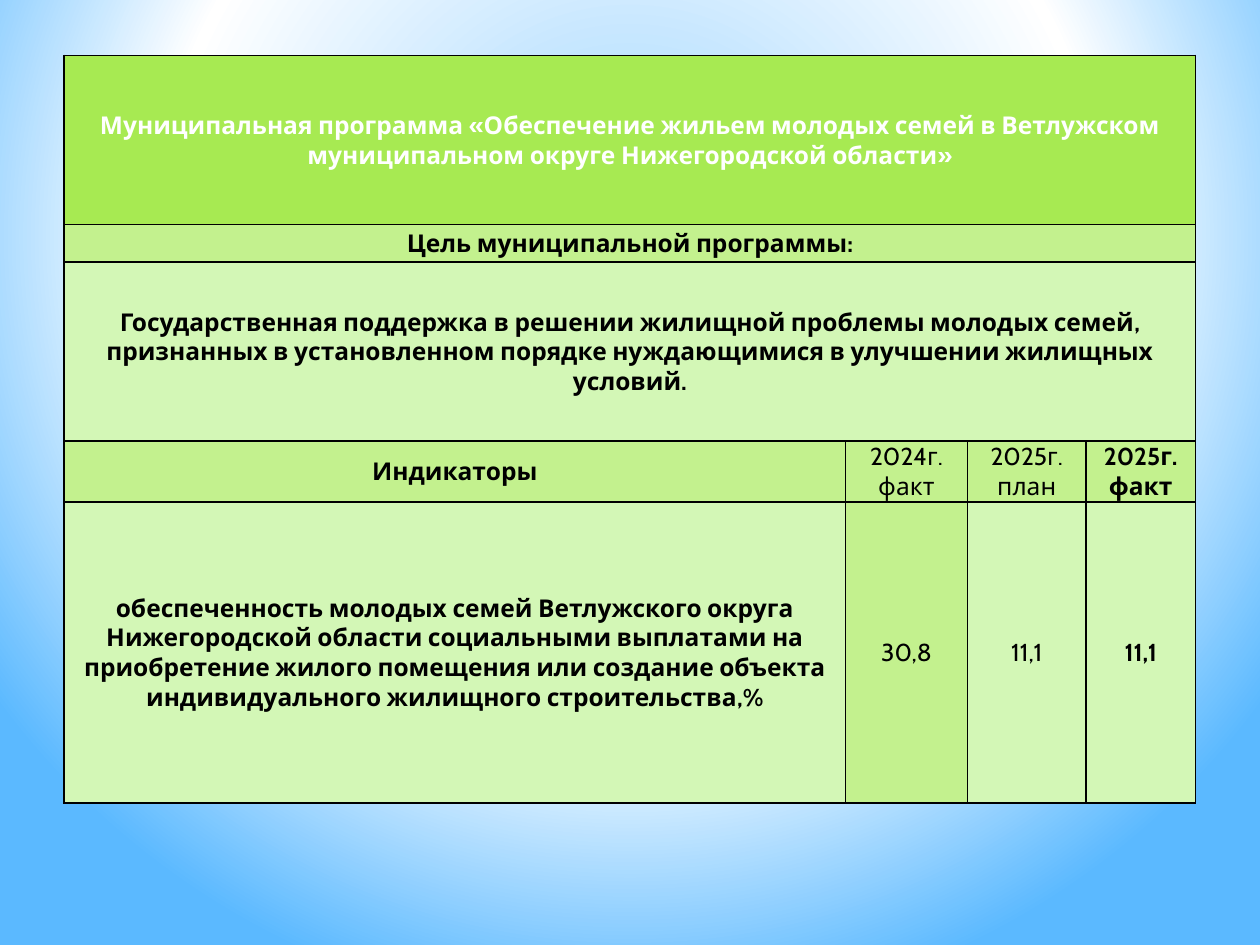
import dataclasses

import pptx
import pptx.dml.color
import pptx.enum.text
import pptx.oxml
import pptx.oxml.ns
import pptx.util


@dataclasses.dataclass(frozen=True)
class Theme:
    """Hold the colours, the font and the sizes."""
    font: str = "Cabin"
    size: int = 14
    line: int = 1
    ink: str = "000000"
    white: str = "FFFFFF"
    head: str = "A7EA52"
    band: str = "C3F18E"
    pale: str = "D3F7B6"
    glow: tuple = ((0, "9ED5FF"), (60, "FFFFFF"), (100, "5BB9FF"))


LOOK = Theme()
WIDE, HIGH = 10, 7.5
COLS = (6.2, 0.97, 0.94, 0.87)
ROWS = (1.34, 0.3, 1.42, 0.47, 2.39)
TITLE = ("Муниципальная программа «Обеспечение жильем молодых семей в Ветлужском "
         "муниципальном округе Нижегородской области»")
AIM = ("Государственная поддержка в решении жилищной проблемы молодых семей, "
       "признанных в установленном порядке нуждающимися в улучшении жилищных условий.")
GOAL = ("обеспеченность молодых семей Ветлужского округа Нижегородской области "
        "социальными выплатами на приобретение жилого помещения или создание объекта "
        "индивидуального жилищного строительства,%")
CELLS = (
    ((TITLE, LOOK.head),),
    (("Цель муниципальной программы:", LOOK.band),),
    ((AIM, LOOK.pale),),
    (("Индикаторы", LOOK.band), ("2024г. факт", LOOK.band),
     ("2025г. план", LOOK.band), ("2025г. факт", LOOK.band)),
    ((GOAL, LOOK.pale), ("30,8", LOOK.band), ("11,1", LOOK.pale), ("11,1", LOOK.pale)),
)


def tint(code):
    """Turn a hex code into a colour."""
    return pptx.dml.color.RGBColor.from_string(code)


def glow(slide):
    """Fill the slide background with a round gradient."""
    stops = "".join(f'<a:gs pos="{pos * 1000}"><a:srgbClr val="{code}"/></a:gs>'
                    for pos, code in LOOK.glow)
    xml = (f'<p:bg {pptx.oxml.ns.nsdecls("p", "a")}><p:bgPr>'
           f'<a:gradFill rotWithShape="1"><a:gsLst>{stops}</a:gsLst>'
           '<a:path path="circle"><a:fillToRect l="20000" t="10000" r="20000" b="60000"/>'
           '</a:path></a:gradFill><a:effectLst/></p:bgPr></p:bg>')
    slide.element.cSld.insert(0, pptx.oxml.parse_xml(xml))


def frame(cell):
    """Draw the four borders of a cell."""
    props = cell._tc.get_or_add_tcPr()
    for side in "LRTB":
        props.append(pptx.oxml.parse_xml(
            f'<a:ln{side} {pptx.oxml.ns.nsdecls("a")} w="{pptx.util.Pt(LOOK.line)}">'
            f'<a:solidFill><a:srgbClr val="{LOOK.ink}"/></a:solidFill></a:ln{side}>'))


def write(cell, text, fill, ink, bold):
    """Set the text and the look of a cell."""
    cell.fill.solid()
    cell.fill.fore_color.rgb = tint(fill)
    cell.vertical_anchor = pptx.enum.text.MSO_ANCHOR.MIDDLE
    cell.margin_left = cell.margin_right = cell.margin_top = pptx.util.Inches(0.01)
    cell.margin_bottom = 0
    cell.text = text
    para = cell.text_frame.paragraphs[0]
    para.alignment = pptx.enum.text.PP_ALIGN.CENTER
    font = para.font
    font.name, font.size, font.bold = LOOK.font, pptx.util.Pt(LOOK.size), bold
    font.color.rgb = tint(ink)


def report(slide, box):
    """Place the programme table in the given box."""
    left, top, width, height = (pptx.util.Inches(part) for part in box)
    table = slide.shapes.add_table(len(ROWS), len(COLS), left, top, width, height).table
    for col, share in zip(table.columns, COLS):
        col.width = int(width * share / sum(COLS))
    for row, share in zip(table.rows, ROWS):
        row.height = int(height * share / sum(ROWS))
    for cell in table.iter_cells():
        frame(cell)
    last = len(COLS) - 1
    for r, row in enumerate(CELLS):
        if len(row) == 1:
            table.cell(r, 0).merge(table.cell(r, last))
        for c, (text, fill) in enumerate(row):
            ink = LOOK.ink if r else LOOK.white
            write(table.cell(r, c), text, fill, ink, c in (0, last))


def main():
    """Build and save the slide."""
    deck = pptx.Presentation()
    deck.slide_width, deck.slide_height = pptx.util.Inches(WIDE), pptx.util.Inches(HIGH)
    slide = deck.slides.add_slide(deck.slide_layouts[6])
    glow(slide)
    report(slide, (0.51, 0.44, sum(COLS), sum(ROWS)))
    deck.save("out.pptx")


if __name__ == "__main__":
    main()
